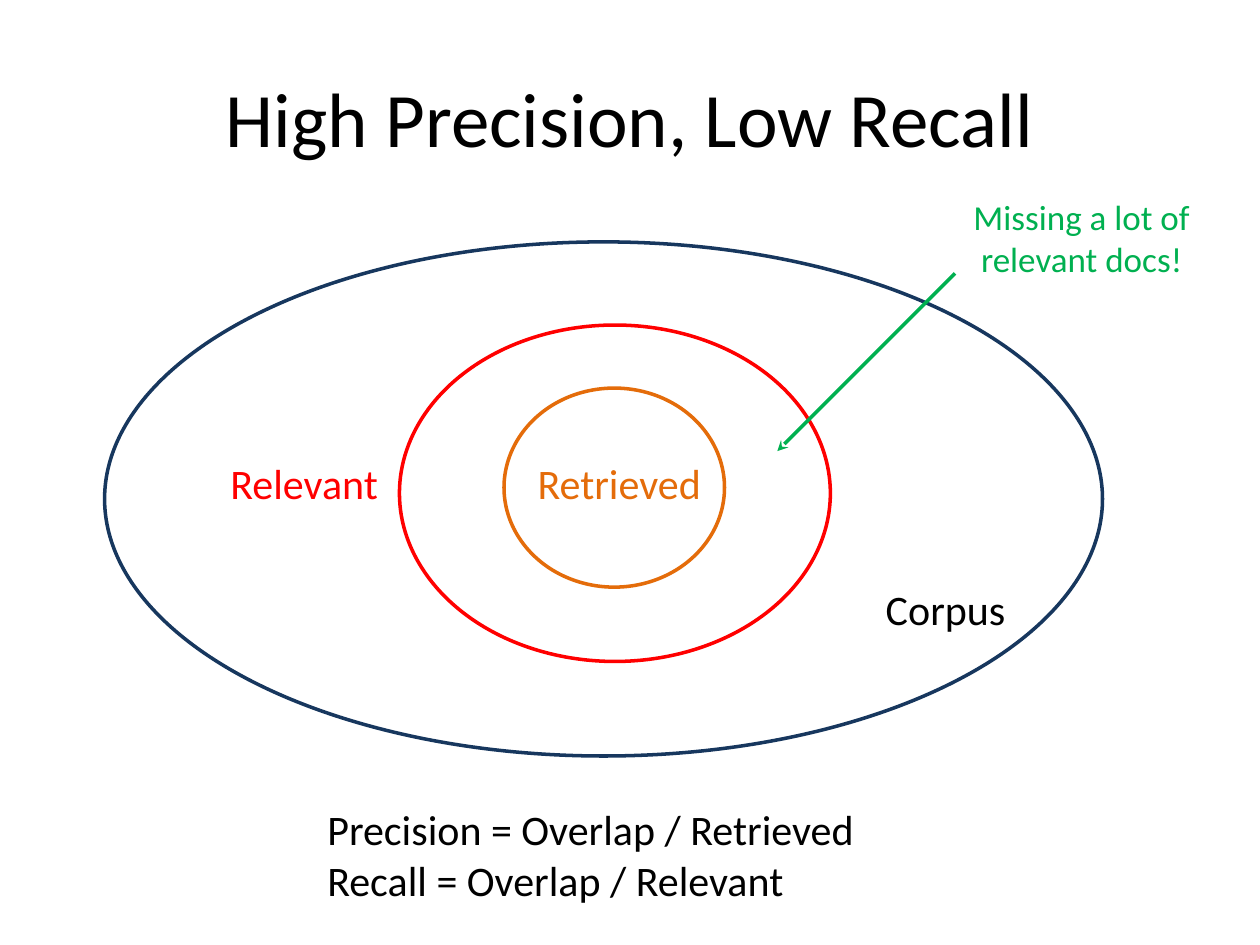
from lxml import etree
from pptx import Presentation
from pptx import util as u
from pptx.dml.color import RGBColor
from pptx.enum import shapes, text
from pptx.oxml.ns import qn

BLACK = RGBColor(0x00, 0x00, 0x00)
NAVY = RGBColor(0x17, 0x37, 0x5E)
RED = RGBColor(0xFF, 0x00, 0x00)
ORANGE = RGBColor(0xE4, 0x6C, 0x0A)
GREEN = RGBColor(0x00, 0xB0, 0x50)


class VennSlide:
    font = "Calibri"
    line_width = u.Pt(2)

    def __init__(self, slide):
        self.s = slide

    def label(self, box, lines, color=BLACK, size=24,
              align=text.PP_ALIGN.CENTER, anchor=text.MSO_ANCHOR.TOP):
        sp = self.s.shapes.add_textbox(*map(u.Inches, box))
        tf = sp.text_frame
        tf.word_wrap = True
        tf.vertical_anchor = anchor
        tf.text = lines
        for p in tf.paragraphs:
            p.alignment = align
            for r in p.runs:
                r.font.name = self.font
                r.font.size = u.Pt(size)
                r.font.color.rgb = color

    def ellipse(self, box, color):
        sp = self.s.shapes.add_shape(shapes.MSO_SHAPE.OVAL, *map(u.Inches, box))
        sp.shadow.inherit = False
        sp.fill.background()
        sp.line.color.rgb = color
        sp.line.width = self.line_width

    def arrow(self, start, end, color):
        sp = self.s.shapes.add_connector(
            shapes.MSO_CONNECTOR.STRAIGHT, *map(u.Inches, start + end))
        sp.line.color.rgb = color
        sp.line.width = self.line_width
        # Arrowhead and no shadow
        etree.SubElement(sp.line._get_or_add_ln(), qn("a:tailEnd"), type="stealth")
        etree.SubElement(sp._element.spPr, qn("a:effectLst"))


def main():
    prs = Presentation()
    prs.slide_width, prs.slide_height = u.Inches(10), u.Inches(7.5)
    venn = VennSlide(prs.slides.add_slide(prs.slide_layouts[6]))

    # Title
    venn.label((0.5, 0.3, 9, 1.25), "High Precision, Low Recall", size=44,
               anchor=text.MSO_ANCHOR.MIDDLE)

    # Nested sets
    venn.ellipse((0.83, 1.92, 7.92, 4.08), NAVY)
    venn.ellipse((3.17, 2.58, 3.42, 2.67), RED)
    venn.ellipse((4, 3.08, 1.75, 1.58), ORANGE)

    # Set names
    for name, left, top, color in (("Corpus", 6.67, 4.58, BLACK),
                                   ("Retrieved", 4.08, 3.58, ORANGE),
                                   ("Relevant", 1.58, 3.58, RED)):
        venn.label((left, top, 1.67, 0.5), name, color)

    # Formulas
    venn.label((2.5, 6.33, 4.67, 0.91),
               "Precision = Overlap / Retrieved\nRecall = Overlap / Relevant",
               align=text.PP_ALIGN.LEFT)

    # Callout
    venn.arrow((7.58, 2.17), (6.17, 3.58), GREEN)
    venn.label((7.5, 1.5, 2.17, 0.77), "Missing a lot of relevant docs!", GREEN, 20)

    prs.save("out.pptx")


if __name__ == "__main__":
    main()
